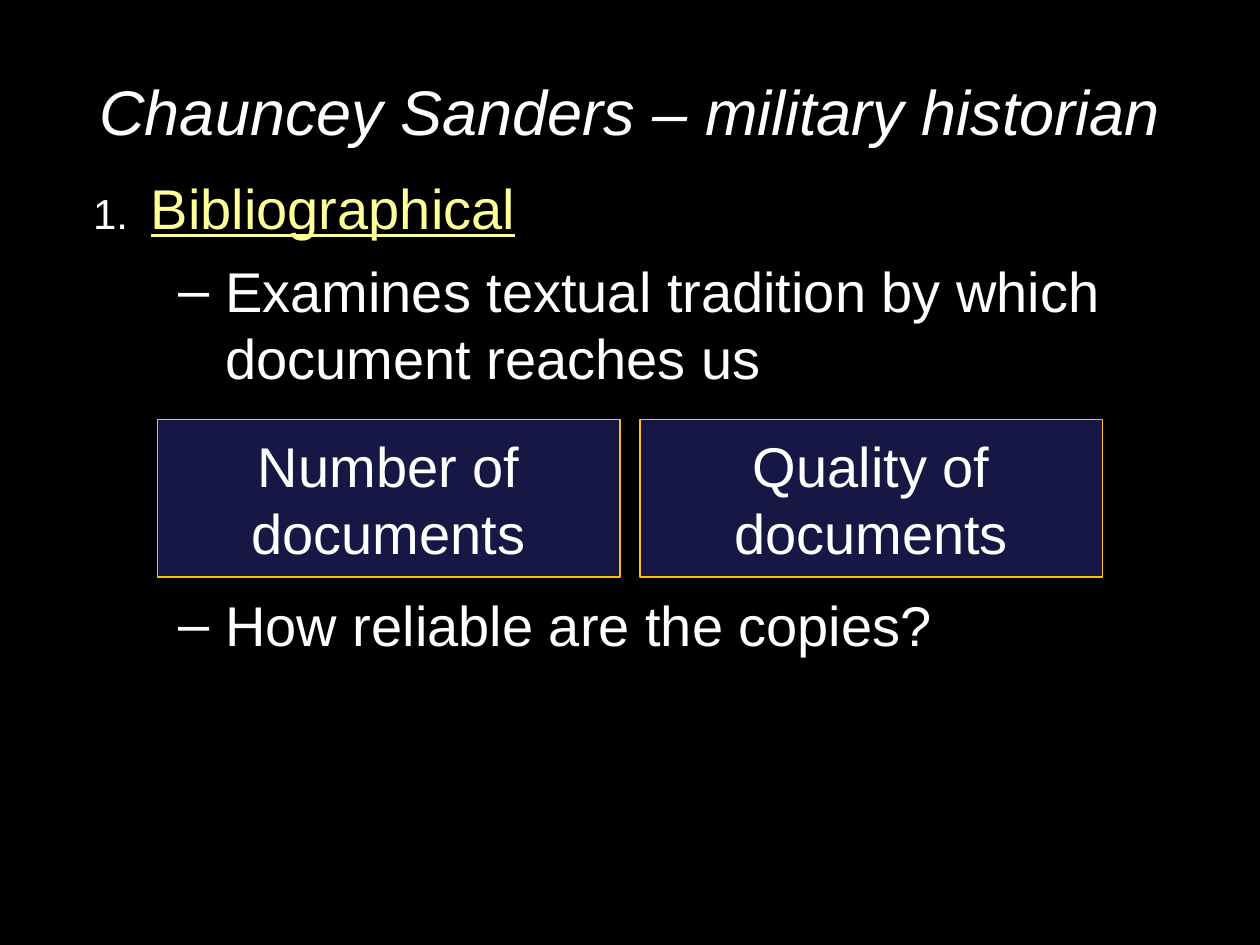
from lxml import etree
from pptx import Presentation
from pptx.dml.color import RGBColor
from pptx.enum.shapes import MSO_SHAPE as Shape
from pptx.enum.text import MSO_ANCHOR as Anchor, PP_ALIGN as Align
from pptx.oxml.ns import qn
from pptx.util import Inches, Pt

COLORS = {"background": "000000", "text": "FFFFFF", "heading": "FFFF99",
          "box": "171745", "border": "FFC000"}


def color(name):
    return RGBColor.from_string(COLORS[name])


def format_run(run, size=32, name="text"):
    run.font.name = "Arial"
    run.font.size = Pt(size)
    run.font.color.rgb = color(name)


def indent(paragraph, margin, hanging, bullet=None):
    properties = paragraph._p.get_or_add_pPr()
    properties.set("marL", str(Inches(margin)))
    properties.set("indent", str(Inches(-hanging)))
    if bullet:
        etree.SubElement(properties, qn("a:buFont")).set("typeface", "Arial")
        etree.SubElement(properties, qn("a:buChar")).set("char", bullet)


def add_title(slide, left, top, width, height, text):
    shape = slide.shapes.add_textbox(Inches(left), Inches(top), Inches(width), Inches(height))
    frame = shape.text_frame
    frame.word_wrap = True
    frame.vertical_anchor = Anchor.MIDDLE
    frame.text = text
    paragraph = frame.paragraphs[0]
    paragraph.alignment = Align.CENTER
    format_run(paragraph.runs[0], 36)
    paragraph.runs[0].font.italic = True


def add_body(slide, left, top, width, height, number, heading, points):
    shape = slide.shapes.add_textbox(Inches(left), Inches(top), Inches(width), Inches(height))
    shape.fill.solid()
    shape.fill.fore_color.rgb = color("background")
    frame = shape.text_frame
    frame.word_wrap = True
    paragraph = frame.paragraphs[0]
    paragraph.text = f"{number}\t"
    format_run(paragraph.runs[0], 24)
    paragraph.space_before = Pt(8)
    indent(paragraph, 0.6, 0.46)
    run = paragraph.add_run()
    run.text = heading
    format_run(run, name="heading")
    run.font.underline = True
    for text, space in points:
        paragraph = frame.add_paragraph()
        paragraph.text = text
        paragraph.level = 1
        paragraph.space_before = Pt(space)
        indent(paragraph, 1.19, 0.37, "–")
        format_run(paragraph.runs[0])


def add_boxes(slide, left, top, width, height, texts, gap=0.16):
    box_width = (width - gap * (len(texts) - 1)) / len(texts)
    for index, text in enumerate(texts):
        box_left = left + index * (box_width + gap)
        shape = slide.shapes.add_shape(Shape.RECTANGLE, Inches(box_left), Inches(top),
                                       Inches(box_width), Inches(height))
        shape.shadow.inherit = False
        shape.fill.solid()
        shape.fill.fore_color.rgb = color("box")
        shape.line.color.rgb = color("border")
        shape.line.width = Pt(1)
        frame = shape.text_frame
        frame.word_wrap = True
        frame.vertical_anchor = Anchor.MIDDLE
        frame.text = text
        frame.paragraphs[0].alignment = Align.CENTER
        format_run(frame.paragraphs[0].runs[0])


def main():
    presentation = Presentation()
    presentation.slide_width, presentation.slide_height = Inches(10), Inches(7.5)
    slide = presentation.slides.add_slide(presentation.slide_layouts[6])
    slide.background.fill.solid()
    slide.background.fill.fore_color.rgb = color("background")
    add_title(slide, 0.5, 0.25, 9, 1.25, "Chauncey Sanders – military historian")
    add_body(slide, 0.5, 1.33, 9, 4.95, "1.", "Bibliographical",
             [("Examines textual tradition by which document reaches us", 9),
              ("How reliable are the copies?", 114)])
    add_boxes(slide, 1.25, 3.33, 7.5, 1.25, ["Number of documents", "Quality of documents"])
    presentation.save("out.pptx")


if __name__ == "__main__":
    main()
